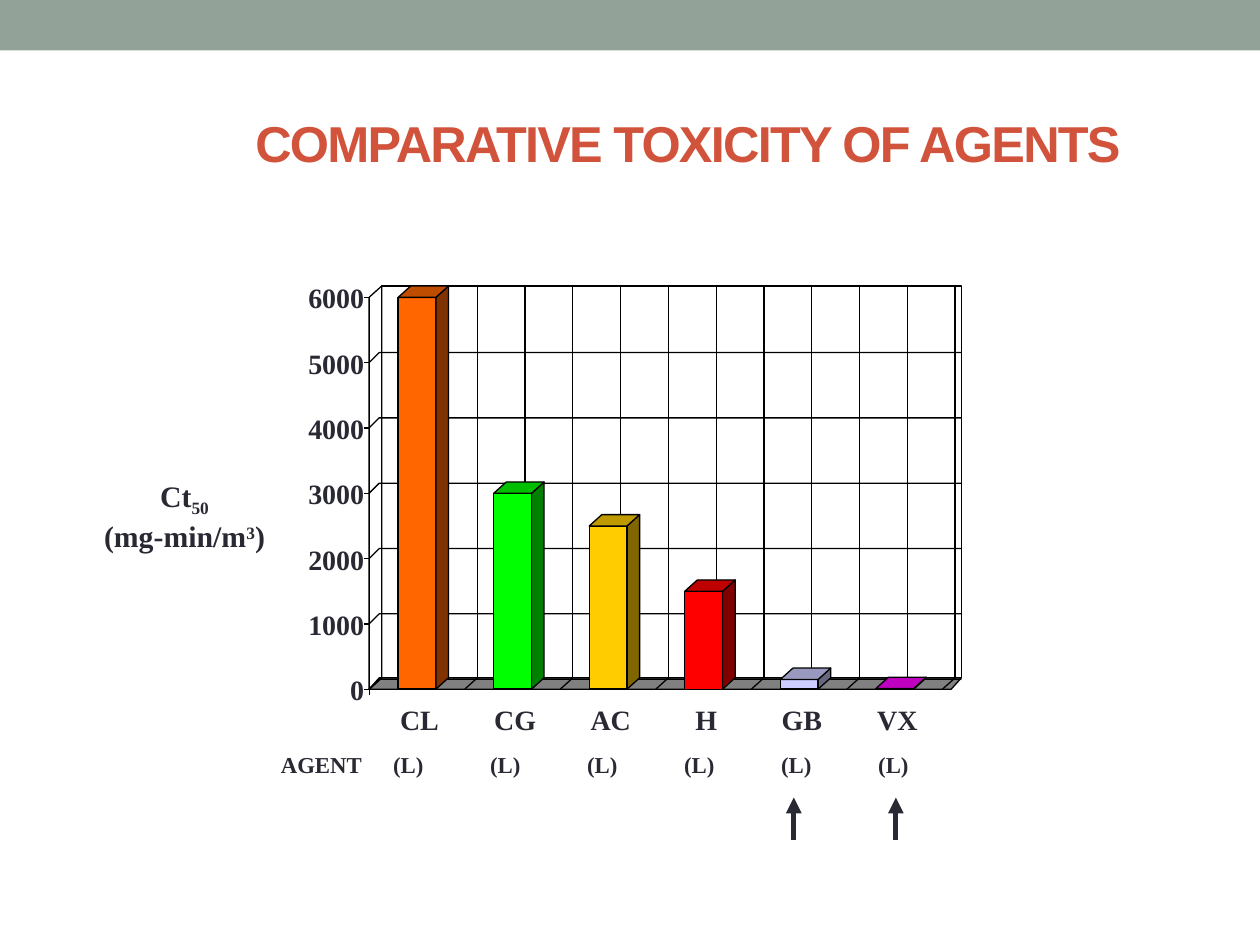
from dataclasses import dataclass

from lxml.etree import SubElement
from pptx import Presentation
from pptx.dml.color import RGBColor
from pptx.enum.shapes import MSO_CONNECTOR as Connector, MSO_SHAPE as Shape
from pptx.enum.text import MSO_ANCHOR as Anchor, PP_ALIGN as Align
from pptx.oxml.ns import qn
from pptx.util import Inches, Pt


@dataclass(frozen=True)
class Theme:
    """Colours, fonts and type sizes of the slide."""
    band: str = "93A299"
    title: str = "D2533C"
    ink: str = "292934"
    line: str = "000000"
    floor: str = "808080"
    heading_font: str = "Arial"
    label_font: str = "Times New Roman"
    title_size: float = 28.8
    axis_title_size: float = 17
    label_size: float = 16
    route_size: float = 13
    thin: float = 0.75
    thick: float = 3


@dataclass(frozen=True)
class Box:
    """A region in inches."""
    x: float
    y: float
    w: float
    h: float

    def lengths(self):
        """Return left, top, width and height as slide lengths."""
        return [Inches(side) for side in (self.x, self.y, self.w, self.h)]


THEME = Theme()
AGENTS = [
    ("CL", 6000, "FF6600", "BF4D00", "803300"),
    ("CG", 3000, "00FF00", "00BF00", "008000"),
    ("AC", 2500, "FFCC00", "BF9900", "806600"),
    ("H", 1500, "FF0000", "BF0000", "800000"),
    ("GB", 150, "CCCCFF", "9999BF", "666680"),
    ("VX", 10, "FF00FF", "BF00BF", "800080"),
]
AXIS_MAX, AXIS_STEP = 6000, 1000
DEPTH_X, DEPTH_Y, SKEW = 0.1, 0.09, 0.08
BAR_INSET, BAR_WIDTH = 0.23, 0.3


def paint(shape, fill=None, outlined=True):
    """Set the fill and outline of a shape."""
    shape.shadow.inherit = False
    if fill:
        shape.fill.solid()
        shape.fill.fore_color.rgb = RGBColor.from_string(fill)
    else:
        shape.fill.background()
    if outlined:
        shape.line.color.rgb = RGBColor.from_string(THEME.line)
        shape.line.width = Pt(THEME.thin)
    else:
        shape.line.fill.background()


def add_rect(slide, box, fill=None, outlined=True):
    """Draw a rectangle."""
    paint(slide.shapes.add_shape(Shape.RECTANGLE, *box.lengths()), fill, outlined)


def add_outline(slide, points, fill=None, outlined=True, close=True):
    """Draw a path through points given in inches."""
    start, *rest = [(Inches(x), Inches(y)) for x, y in points]
    builder = slide.shapes.build_freeform(*start)
    builder.add_line_segments(rest, close=close)
    paint(builder.convert_to_shape(), fill, outlined)


def add_line(slide, start, end, color=THEME.line, width=THEME.thin):
    """Draw a straight line and return it."""
    ends = [Inches(value) for value in (*start, *end)]
    line = slide.shapes.add_connector(Connector.STRAIGHT, *ends)
    line.line.color.rgb = RGBColor.from_string(color)
    line.line.width = Pt(width)
    SubElement(line._element.spPr, qn("a:effectLst"))
    return line


def style(run, size, color=THEME.ink, font=THEME.label_font):
    """Format one bold run."""
    run.font.name, run.font.size, run.font.bold = font, Pt(size), True
    run.font.color.rgb = RGBColor.from_string(color)


def add_label(slide, box, text, size, align=Align.LEFT, inset=True, wrap=False):
    """Place a one-line label and return its text frame."""
    frame = slide.shapes.add_textbox(*box.lengths()).text_frame
    frame.word_wrap = wrap
    frame.margin_left = frame.margin_right = Inches(0.08 if inset else 0)
    frame.margin_top = frame.margin_bottom = Inches(0.04 if inset else 0)
    frame.text = text
    frame.paragraphs[0].alignment = align
    for run in frame.paragraphs[0].runs:
        style(run, size)
    return frame


def add_title(slide, box):
    """Write the slide title."""
    frame = add_label(slide, box, "COMPARATIVE TOXICITY OF AGENTS",
                      THEME.title_size, Align.CENTER, wrap=True)
    frame.vertical_anchor = Anchor.MIDDLE
    run = frame.paragraphs[0].runs[0]
    style(run, THEME.title_size, THEME.title, THEME.heading_font)
    run.font._element.set("spc", "-100")


def add_axis_title(slide, box):
    """Write the quantity and unit of the value axis."""
    frame = add_label(slide, box, "Ct", THEME.axis_title_size, Align.CENTER)
    unit = frame.add_paragraph()
    unit.alignment = Align.CENTER
    parts = [(frame.paragraphs[0], "50", -25000), (unit, "(mg-min/m", 0),
             (unit, "3", 30000), (unit, ")", 0)]
    for paragraph, text, baseline in parts:
        run = paragraph.add_run()
        run.text = text
        style(run, THEME.axis_title_size)
        if baseline:
            run.font._element.set("baseline", str(baseline))


def add_room(slide, box):
    """Draw the floor, walls and grid behind the bars."""
    right, base = box.x + box.w, box.y + box.h
    back_x, back_base = box.x + DEPTH_X, base - DEPTH_Y
    floor = [(box.x, base), (box.x + SKEW, back_base),
             (right, back_base), (right - SKEW, base)]
    add_outline(slide, floor, THEME.floor, outlined=False)
    half_step = (box.w - 0.15) / (2 * len(AGENTS))
    for index in range(2 * len(AGENTS) + 1):
        x = back_x + index * half_step
        add_line(slide, (x, back_base), (x - DEPTH_X, base))
        add_line(slide, (x, back_base), (x, box.y))
    for value in range(0, AXIS_MAX, AXIS_STEP):
        y = base - (box.h - DEPTH_Y) * value / AXIS_MAX
        add_outline(slide, [(box.x, y), (box.x + SKEW, y - SKEW),
                            (right, y - SKEW)], close=False)
    add_outline(slide, floor)
    add_outline(slide, [(box.x, base), (box.x, box.y + DEPTH_Y),
                        (back_x, box.y), (back_x, back_base)])
    add_rect(slide, Box(back_x, box.y, box.w - DEPTH_X, box.h - DEPTH_Y))


def add_bar(slide, box, front, top, side):
    """Draw one solid bar whose front face fills the box."""
    right, base = box.x + box.w, box.y + box.h
    back_right, back_top = right + DEPTH_X, box.y - DEPTH_Y
    add_outline(slide, [(right, base), (right, box.y), (back_right, back_top),
                        (back_right, base - DEPTH_Y)], side)
    add_rect(slide, box, front)
    add_outline(slide, [(right, box.y), (back_right, back_top),
                        (box.x + DEPTH_X, back_top), (box.x, box.y)], top)


def add_value_axis(slide, box):
    """Draw the value axis with its ticks and numbers."""
    base = box.y + box.h
    add_line(slide, (box.x, base + 0.05), (box.x, box.y + DEPTH_Y))
    for value in range(0, AXIS_MAX + 1, AXIS_STEP):
        y = base - (box.h - DEPTH_Y) * value / AXIS_MAX
        add_line(slide, (box.x, y), (box.x - 0.04, y))
        add_label(slide, Box(box.x - 0.49, y - 0.13, 0.45, 0.27), str(value),
                  THEME.label_size, Align.RIGHT, inset=False)


def add_toxicity_chart(slide, box):
    """Draw the bars of all agents in their room, with both axes."""
    add_room(slide, box)
    base = box.y + box.h
    step = (box.w - 0.15) / len(AGENTS)
    for index, (agent, value, *faces) in enumerate(AGENTS):
        x = box.x + BAR_INSET + index * step
        height = (box.h - DEPTH_Y) * value / AXIS_MAX
        add_bar(slide, Box(x, base - height, BAR_WIDTH, height), *faces)
        add_label(slide, Box(x, base + 0.11, 0.34, 0.27), agent,
                  THEME.label_size, Align.CENTER, inset=False)
    add_value_axis(slide, box)


def add_agent_row(slide, box):
    """Write the route under each agent and point to the last two."""
    add_label(slide, Box(box.x, box.y, 0.82, 0.3), "AGENT", THEME.route_size)
    for index in range(len(AGENTS)):
        x = box.x + 0.89 + 0.77 * index
        add_label(slide, Box(x, box.y, 0.41, 0.3), "(L)", THEME.route_size)
    for x in (box.x + 4.15, box.x + 4.96):
        arrow = add_line(slide, (x, box.y + 0.41), (x, box.y + box.h),
                         THEME.ink, THEME.thick)
        SubElement(arrow.line._get_or_add_ln(), qn("a:headEnd"), type="triangle")


def main():
    """Build and save the slide."""
    deck = Presentation()
    deck.slide_width, deck.slide_height = Inches(10), Inches(7.5)
    slide = deck.slides.add_slide(deck.slide_layouts[6])
    add_rect(slide, Box(0, 0, 10, 0.4), THEME.band, outlined=False)
    add_title(slide, Box(1.67, 0.67, 7.58, 0.92))
    add_toxicity_chart(slide, Box(2.93, 2.27, 4.7, 3.2))
    add_agent_row(slide, Box(2.15, 5.92, 5.16, 0.75))
    add_axis_title(slide, Box(0.73, 3.75, 1.47, 0.65))
    deck.save("out.pptx")


if __name__ == "__main__":
    main()
